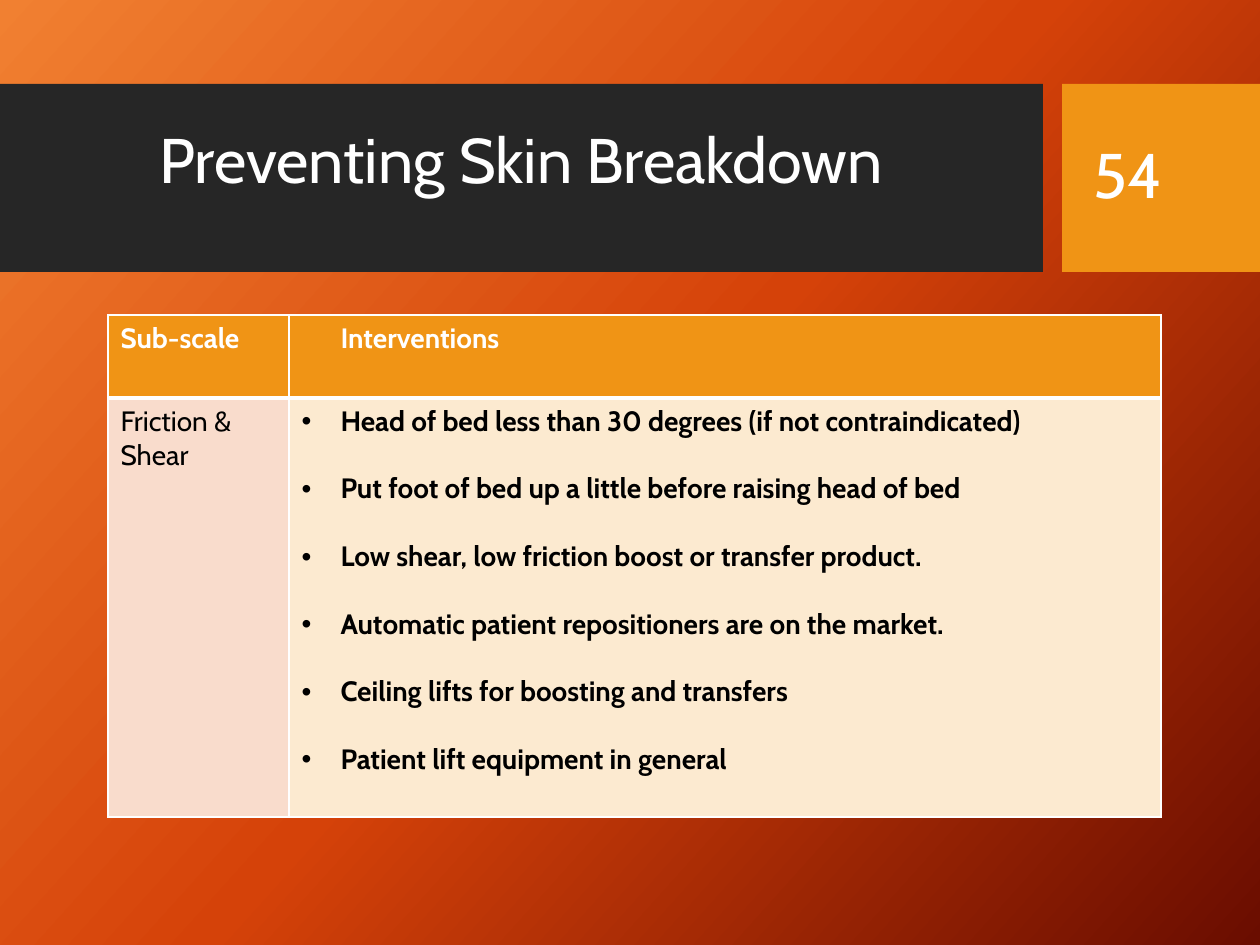
from copy import deepcopy

from lxml import etree
from pptx import Presentation
from pptx import util as u
from pptx.dml.color import RGBColor
from pptx.enum import shapes, text
from pptx.oxml.ns import qn

SCALE = 914400 / 126
FONT = "Cabin"
COLORS = {
    "glow": "F18031", "ember": "D54209", "maroon": "6A0D00",
    "band": "262626", "accent": "F09415", "label": "F9DCCC",
    "body": "FCEAD0", "white": "FFFFFF", "black": "000000",
}
INTERVENTIONS = [
    "Head of bed less than 30 degrees (if not contraindicated)",
    "Put foot of bed up a little before raising head of bed",
    "Low shear, low friction boost or transfer product.",
    "Automatic patient repositioners are on the market.",
    "Ceiling lifts for boosting and transfers",
    "Patient lift equipment in general",
]


def px(length):
    """Turn px into EMU."""
    return u.Emu(round(length * SCALE))


def rgb(name):
    """Return a named colour."""
    return RGBColor.from_string(COLORS[name])


def style(paragraph, size, color, bold=False):
    """Format every run of a paragraph."""
    for run in paragraph.runs:
        run.font.name = FONT
        run.font.size = u.Pt(size)
        run.font.bold = bold
        run.font.color.rgb = rgb(color)


def paint_background(slide):
    """Fill the slide with a diagonal three-stop gradient."""
    fill = slide.background.fill
    fill.gradient()
    fill.gradient_angle = 360 - 42
    first = fill.gradient_stops[0]._gs
    first.addnext(deepcopy(first))
    names = ("glow", "ember", "maroon")
    for stop, name, position in zip(fill.gradient_stops, names, (0, 0.5, 1)):
        stop.color.rgb = rgb(name)
        stop.position = position


def add_block(slide, box, color):
    """Add a plain filled rectangle."""
    shape = slide.shapes.add_shape(shapes.MSO_SHAPE.RECTANGLE, *map(px, box))
    shape.shadow.inherit = False
    shape.fill.solid()
    shape.fill.fore_color.rgb = rgb(color)
    shape.line.fill.background()


def add_heading(slide, box, wording):
    """Add large white text centred vertically in its box."""
    frame = slide.shapes.add_textbox(*map(px, box)).text_frame
    frame.word_wrap = True
    frame.vertical_anchor = text.MSO_ANCHOR.MIDDLE
    frame.text = wording
    paragraph = frame.paragraphs[0]
    paragraph.line_spacing = 0.9
    style(paragraph, 36, "white")


def add_header(slide, box):
    """Add the title band and the slide number block."""
    left, top, width, height = box
    band, number = 1043, 198
    number_left = left + width - number
    add_block(slide, (left, top, band, height), "band")
    add_block(slide, (number_left, top, number, height), "accent")
    add_heading(slide, (left + 147, top, 968, 158), "Preventing Skin Breakdown")
    add_heading(slide, (number_left + 19, top + 19, 160, 150), "54")


def format_cell(cell, color, top, bottom):
    """Give a cell white borders and a solid fill."""
    properties = cell._tc.get_or_add_tcPr()
    for side, points in (("L", 1), ("R", 1), ("T", top), ("B", bottom)):
        line = etree.SubElement(properties, qn(f"a:ln{side}"), w=str(u.Pt(points)))
        solid = etree.SubElement(line, qn("a:solidFill"))
        etree.SubElement(solid, qn("a:srgbClr"), val=COLORS["white"])
    cell.fill.solid()
    cell.fill.fore_color.rgb = rgb(color)


def indent(paragraph, margin, first_line, bullet=None):
    """Set a paragraph's indents and optional bullet."""
    properties = paragraph._p.get_or_add_pPr()
    properties.set("marL", str(px(margin)))
    properties.set("indent", str(px(first_line)))
    if bullet:
        etree.SubElement(properties, qn("a:buFont"), typeface="Arial")
        etree.SubElement(properties, qn("a:buChar"), char=bullet)


def add_interventions(slide, box):
    """Add the table of interventions for a sub-scale."""
    left, top, width, height = box
    label_width, header_height, hang = 181, 83, 39
    table = slide.shapes.add_table(2, 2, *map(px, box)).table
    table.columns[0].width = px(label_width)
    table.columns[1].width = px(width - label_width)
    table.rows[0].height = px(header_height)
    table.rows[1].height = px(height - header_height)

    rows = [
        ("Sub-scale", "Interventions"),
        ("Friction & Shear", "\n".join(INTERVENTIONS)),
    ]
    fills = [("accent", "accent"), ("label", "body")]
    for r, row in enumerate(rows):
        for c, wording in enumerate(row):
            cell = table.cell(r, c)
            cell.text_frame.text = wording
            format_cell(cell, fills[r][c], (1, 3)[r], (3, 1)[r])
            for i, paragraph in enumerate(cell.text_frame.paragraphs):
                if r and c:
                    if i:
                        paragraph.space_before = u.Pt(19.3)
                    indent(paragraph, hang, -hang, "•")
                elif c:
                    indent(paragraph, 0, hang)
                style(paragraph, 16, ("white", "black")[r], (r, c) != (1, 0))


def main():
    """Build and save the slide."""
    presentation = Presentation()
    presentation.slide_width, presentation.slide_height = px(1260), px(945)
    slide = presentation.slides.add_slide(presentation.slide_layouts[6])
    paint_background(slide)
    add_header(slide, (0, 84, 1260, 188))
    add_interventions(slide, (108, 315, 1053, 502))
    presentation.save("out.pptx")


if __name__ == "__main__":
    main()
